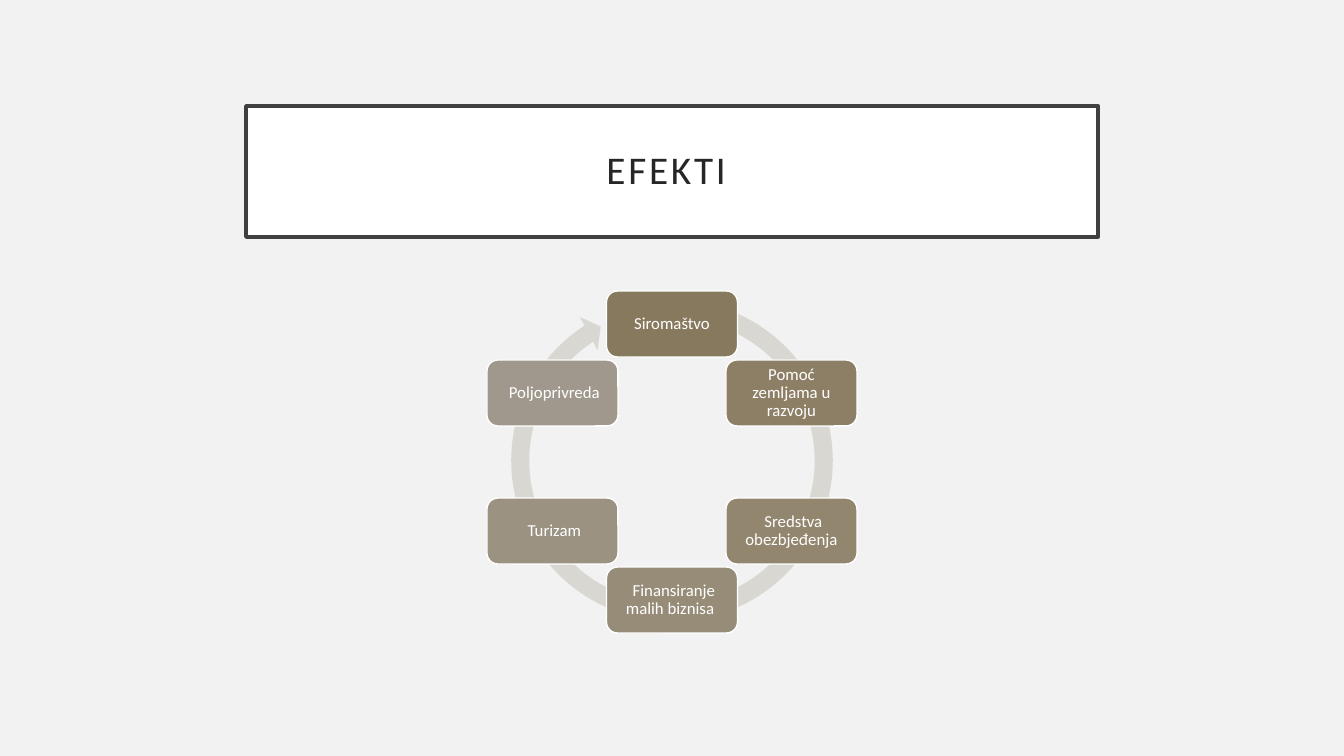
import math

from pptx import Presentation, util as u
from pptx.dml.color import RGBColor
from pptx.enum import shapes, text

PX = 914400 / 100.8


def px(length):
    return u.Emu(round(length * PX))


def style_box(box, fill, line, line_width, inset, words, size, color):
    """Fill and outline a box and centre one line of wording in it."""
    box.fill.solid()
    box.fill.fore_color.rgb = RGBColor.from_string(fill)
    box.line.color.rgb = RGBColor.from_string(line)
    box.line.width = u.Pt(line_width)
    frame = box.text_frame
    frame.word_wrap = True
    frame.auto_size = text.MSO_AUTO_SIZE.NONE
    frame.vertical_anchor = text.MSO_ANCHOR.MIDDLE
    frame.margin_left = frame.margin_right = px(inset)
    frame.margin_top = frame.margin_bottom = px(inset)
    para = frame.paragraphs[0]
    para.alignment = text.PP_ALIGN.CENTER
    para.line_spacing = 0.9
    para.space_before = u.Pt(0)
    span = para.add_run()
    span.text = words
    span.font.name = "Calibri"
    span.font.size = u.Pt(size)
    span.font.color.rgb = RGBColor.from_string(color)
    return span


deck = Presentation()
deck.slide_width, deck.slide_height = px(1344), px(756)
page = deck.slides.add_slide(deck.slide_layouts[5])
page.background.fill.solid()
page.background.fill.fore_color.rgb = RGBColor.from_string("F2F2F2")

title = page.shapes.title
title.left, title.top, title.width, title.height = px(246), px(106), px(852), px(131)
heading = style_box(title, "FFFFFF", "404040", 2.5, 20, "EFEKTI ", 28, "262626")
heading.font._element.set("spc", "200")

# Cycle: an arrow ring with six boxes, clockwise from the top
CENTER_X, CENTER_Y, RADIUS = 672, 461, 138
RING_SIZE = 341
BOX_WIDTH, BOX_HEIGHT = 131, 66

ring = page.shapes.add_shape(
    shapes.MSO_SHAPE.CIRCULAR_ARROW,
    px(CENTER_X - RING_SIZE / 2), px(290), px(RING_SIZE), px(RING_SIZE))
for index, value in enumerate([0.053, 3.126, 142.05, 171.405, 0.055]):
    ring.adjustments[index] = value
ring.shadow.inherit = False
ring.fill.solid()
ring.fill.fore_color.rgb = RGBColor.from_string("D9D7D2")
ring.line.fill.background()

effects = [
    (" Siromaštvo ", "87795D"),
    ("Pomoć zemljama u razvoju", "8D7F65"),
    (" Sredstva obezbjeđenja", "93866E"),
    (" Finansiranje malih biznisa ", "978C78"),
    (" Turizam", "9B9282"),
    (" Poljoprivreda", "A0988C"),
]
for index, (words, fill) in enumerate(effects):
    angle = 2 * math.pi * index / len(effects)
    left = CENTER_X + RADIUS * math.sin(angle) - BOX_WIDTH / 2
    top = CENTER_Y + 1 - RADIUS * math.cos(angle) - BOX_HEIGHT / 2
    box = page.shapes.add_shape(
        shapes.MSO_SHAPE.ROUNDED_RECTANGLE,
        px(left), px(top), px(BOX_WIDTH), px(BOX_HEIGHT))
    box.shadow.inherit = False
    style_box(box, fill, "FFFFFF", 1, 8, words, 12, "FFFFFF")

deck.save("out.pptx")
